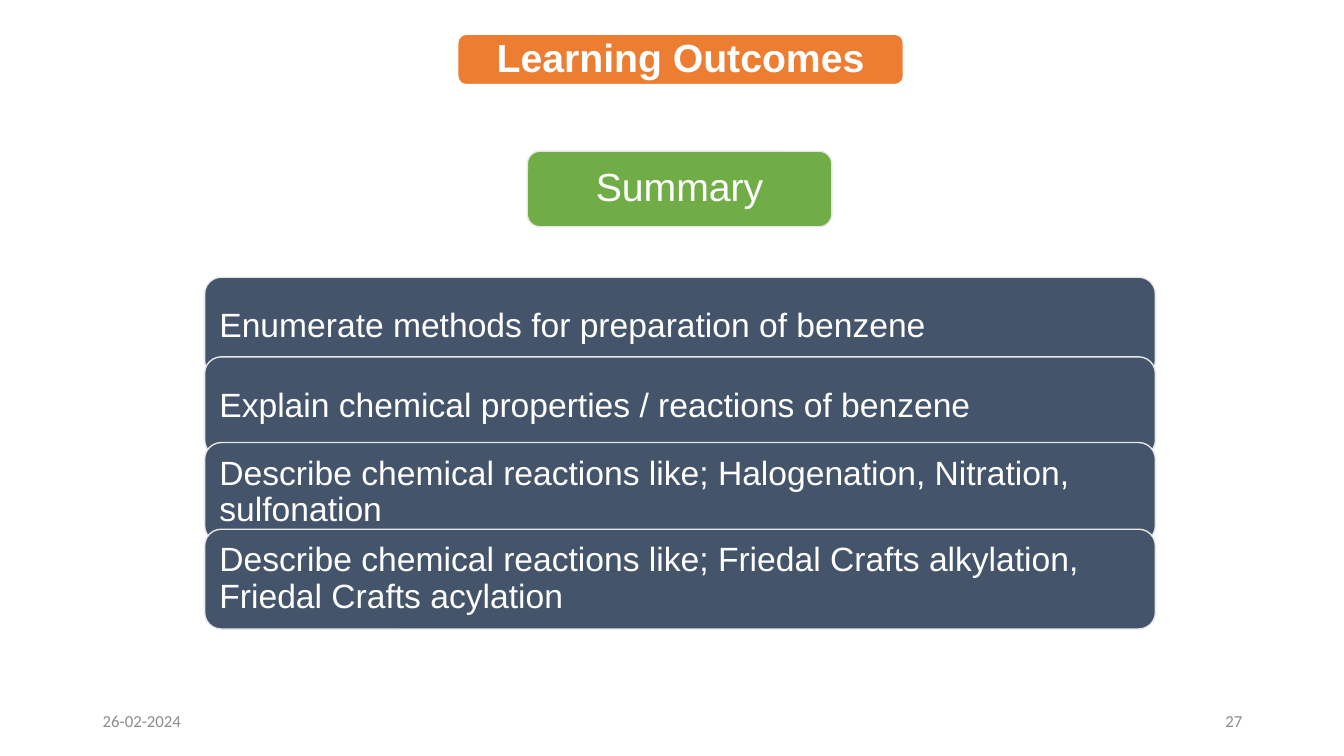
import pptx
import pptx.dml.color
import pptx.enum.shapes
import pptx.enum.text
import pptx.util

PX = 9144  # EMU in one px, 100 px to the inch
ALIGN = pptx.enum.text.PP_ALIGN
ROUND = pptx.enum.shapes.MSO_SHAPE.ROUNDED_RECTANGLE


def color(code):
    return pptx.dml.color.RGBColor.from_string(code)


def write(shape, text, align, inset, size, name, ink, bold=False):
    frame = shape.text_frame
    frame.word_wrap = True
    frame.vertical_anchor = pptx.enum.text.MSO_ANCHOR.MIDDLE
    for side, gap in inset.items():
        setattr(frame, "margin_" + side, gap * PX)
    para = frame.paragraphs[0]
    para.text = text
    para.alignment = align
    font = para.font
    for key, value in {"size": pptx.util.Pt(size), "name": name, "bold": bold}.items():
        setattr(font, key, value)
    font.color.rgb = color(ink)
    return para


deck = pptx.Presentation()
deck.slide_width = 1333 * PX
deck.slide_height = 750 * PX
slide = deck.slides.add_slide(deck.slide_layouts[6])

# Title, summary and outcome cards: left, top, width, height
cards = [
    ("Learning Outcomes", (454, 34, 442, 50), "ED7D31", "FFFFFF", ALIGN.CENTER, 12, 28, True),
    ("Summary", (523, 150, 302, 75), "70AD47", "E7E6E6", ALIGN.CENTER, 12, 28, False),
]
goals = {
    275: "Enumerate methods for preparation of benzene",
    354: "Explain chemical properties / reactions of benzene",
    439: "Describe chemical reactions like; Halogenation, Nitration, sulfonation",
    525: "Describe chemical reactions like; Friedal Crafts alkylation, Friedal Crafts acylation",
}
for top, goal in goals.items():
    cards.append((goal, (203, top, 943, 99), "44546A", "E7E6E6", ALIGN.LEFT, 10, 24, False))

for text, box, fill, edge, align, gap, size, bold in cards:
    card = slide.shapes.add_shape(ROUND, *[n * PX for n in box])
    card.shadow.inherit = False
    card.fill.solid()
    card.fill.fore_color.rgb = color(fill)
    card.line.color.rgb = color(edge)
    card.line.width = pptx.util.Pt(1)
    inset = dict.fromkeys(("left", "top", "right", "bottom"), gap)
    para = write(card, text, align, inset, size, "Arial", "FFFFFF", bold)
    para.line_spacing = 0.9

# Footer
for left, text, align in ((92, "26-02-2024", ALIGN.LEFT), (942, "27", ALIGN.RIGHT)):
    note = slide.shapes.add_textbox(left * PX, 695 * PX, 300 * PX, 40 * PX)
    write(note, text, align, {"left": 10, "right": 10}, 12, "Calibri", "8C8C8C")

deck.save("out.pptx")
